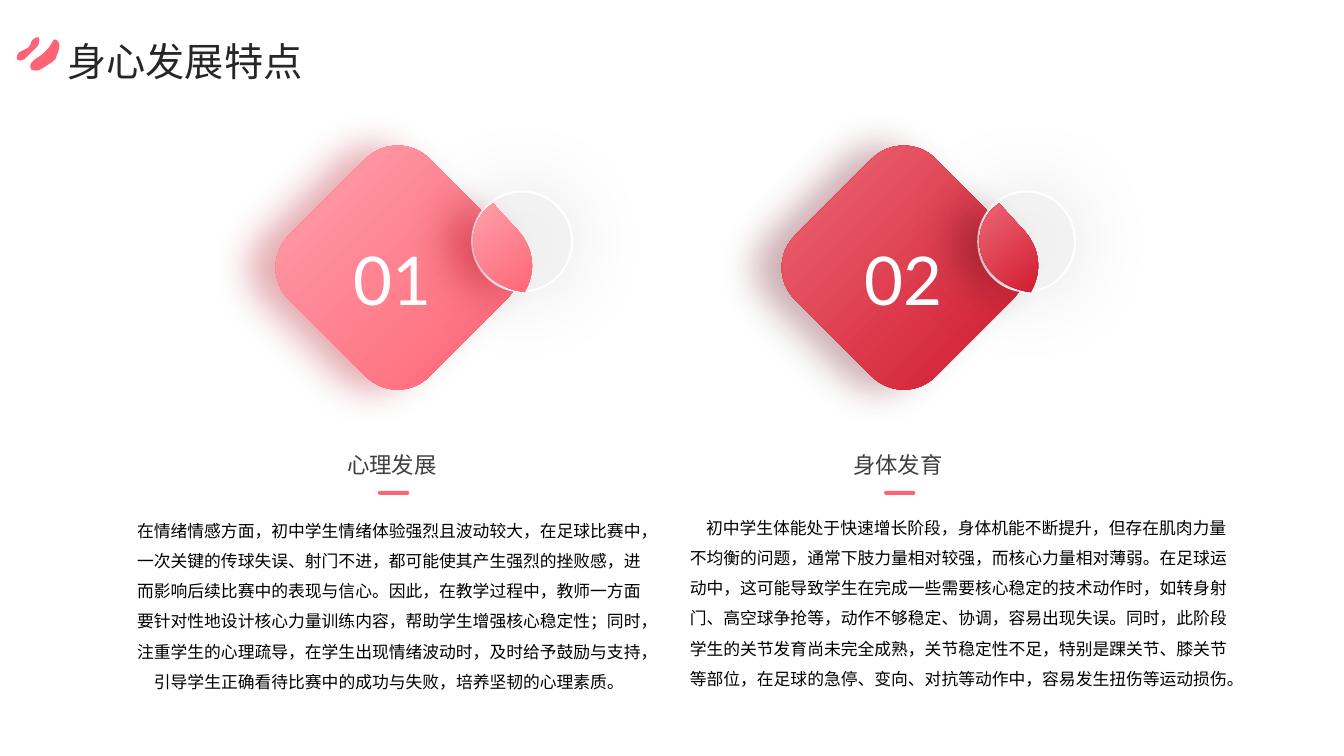
import math
from dataclasses import dataclass
from typing import Any

from lxml import etree
from pptx import Presentation
from pptx import util as u
from pptx.dml.color import RGBColor
from pptx.enum import shapes, text
from pptx.oxml import ns

Point = tuple[float, float]
Segment = tuple[Point, ...]
Outline = list[Segment]

CORAL = RGBColor(0xFF, 0x63, 0x74)
LIGHT_CORAL = RGBColor(0xFF, 0xA1, 0xAC)
CRIMSON = RGBColor(0xCF, 0x18, 0x2C)
LIGHT_CRIMSON = RGBColor(0xEE, 0x69, 0x77)
CORAL_SHADE = RGBColor(0xB1, 0x00, 0x13)
CRIMSON_SHADE = RGBColor(0x68, 0x0C, 0x16)
BLACK = RGBColor(0x00, 0x00, 0x00)
WHITE = RGBColor(0xFF, 0xFF, 0xFF)
GLASS = RGBColor(0xF2, 0xF2, 0xF2)
TITLE_GREY = RGBColor(0x26, 0x26, 0x26)
HEADING_GREY = RGBColor(0x40, 0x40, 0x40)
CHINESE_FONT = "Noto Sans CJK SC"
NUMBER_FONT = "Lato"
DIAMOND_TOP = 100.8
DIAMOND_RADIUS = 90.4
LENS_TILT = 5.6
MARK_TILT = 8.6

MARK: list[Outline] = [
    [
        ((15.1, 43.2),),
        ((14.4, 43.2), (13, 43.2), (12.2, 42.5)),
        ((12.2, 41.8),),
        ((11.5, 40.3), (13, 38.2), (13.7, 37.4)),
        ((15.1, 36.7), (16.6, 36), (18, 35.3)),
        ((19.4, 34.6), (20.9, 33.8), (21.6, 32.4)),
        ((22.3, 31), (22.3, 29.5), (23, 28.8)),
        ((24.5, 27.4), (25.9, 26.6), (27.4, 26.6)),
        ((28.8, 26.6), (28.1, 31), (27.4, 32.4)),
        ((25.9, 34.6), (23, 36.7), (20.9, 38.9)),
        ((20.2, 40.3), (18.7, 41), (17.3, 42.5)),
        ((16.6, 42.5), (15.8, 43.2), (15.1, 43.2)),
    ],
    [
        ((24.5, 50.4),),
        ((23.8, 50.4), (23, 50.4), (22.3, 49.7)),
        ((20.2, 46.1), (23.8, 43.2), (25.9, 41.8)),
        ((31, 38.9), (35.3, 34.6), (38.2, 28.8)),
        ((39.2, 28.1),),
        ((41, 28.1), (42.5, 30.2), (42.5, 31.7)),
        ((42.5, 33.1), (42.5, 35.3), (41.8, 36.7)),
        ((41, 38.9), (40.3, 40.3), (39.6, 42.5)),
        ((37.4, 44.6), (34.6, 46.1), (32.4, 47.5)),
        ((30.2, 49), (27.4, 51.1), (24.5, 50.4)),
    ],
]
LENS: Outline = [
    ((158.4, 44.6),),
    ((159.1, 45.4),),
    ((175.7, 63.4), (175.7, 63.4), (175.7, 63.4)),
    ((187.9, 76.3), (189.4, 93.6), (181.4, 107.3)),
    ((181.4, 108),),
    ((159.1, 105.8), (142.6, 87.8), (144.7, 68.4)),
    ((145.4, 61.2), (148.3, 54), (153.4, 49)),
]


@dataclass
class Box:
    left: float
    top: float
    width: float
    height: float

    def lengths(self) -> list[u.Length]:
        return [u.Pt(value) for value in (self.left, self.top, self.width, self.height)]


@dataclass
class Shadow:
    color: RGBColor
    opacity: int
    blur: float
    distance: float


@dataclass
class Card:
    number: str
    heading: str
    body: str
    left: float
    number_left: float
    circle_width: float
    body_box: Box
    indent: float
    dark: RGBColor
    light: RGBColor
    shade: RGBColor


CARDS = [
    Card("01", "心理发展",
         "在情绪情感方面，初中学生情绪体验强烈且波动较大，在足球比赛中，一次关键的传球失误、射门不进，都可能使其产生强烈的挫败感，进而影响后续比赛中的表现与信心。因此，在教学过程中，教师一方面要针对性地设计核心力量训练内容，帮助学生增强核心稳定性；同时，注重学生的心理疏导，在学生出现情绪波动时，及时给予鼓励与支持，引导学生正确看待比赛中的成功与失败，培养坚韧的心理素质。",
         193.7, 223.9, 71.3, Box(88.6, 361, 378.7, 135.4), 0, CORAL, LIGHT_CORAL, CORAL_SHADE),
    Card("02", "身体发育",
         "初中学生体能处于快速增长阶段，身体机能不断提升，但存在肌肉力量不均衡的问题，通常下肢力量相对较强，而核心力量相对薄弱。在足球运动中，这可能导致学生在完成一些需要核心稳定的技术动作时，如转身射门、高空球争抢等，动作不够稳定、协调，容易出现失误。同时，此阶段学生的关节发育尚未完全成熟，关节稳定性不足，特别是踝关节、膝关节等部位，在足球的急停、变向、对抗等动作中，容易发生扭伤等运动损伤。",
         555.2, 589, 69.1, Box(480.2, 358.9, 409, 162.7), 11.2, CRIMSON, LIGHT_CRIMSON, CRIMSON_SHADE),
]


def set_values(target: Any, values: dict[str, Any]) -> None:
    for name, value in values.items():
        setattr(target, name, value)


def diamond_outline() -> Outline:
    corner = [(77.5, -23), (DIAMOND_RADIUS, -10.6), (DIAMOND_RADIUS, 10.6), (77.5, 23)]
    outline: Outline = []
    for _ in range(4):
        start, *curve = [(x + DIAMOND_RADIUS, y + DIAMOND_RADIUS) for x, y in corner]
        outline += [(start,), tuple(curve)]
        corner = [(-y, x) for x, y in corner]
    return outline


def turn(point: Point, pivot: Point, degrees: float) -> Point:
    cosine, sine = math.cos(math.radians(degrees)), math.sin(math.radians(degrees))
    x, y = point[0] - pivot[0], point[1] - pivot[1]
    return pivot[0] + x * cosine - y * sine, pivot[1] + x * sine + y * cosine


def draw_outlines(slide: Any, outlines: list[Outline], left: float = 0, top: float = 0,
                  tilt: float = 0, pivot: Point = (0, 0)) -> Any:
    contours = [[tuple(u.Pt(value + offset) for value, offset in zip(turn(point, pivot, -tilt), (left, top)))
                 for segment in outline for point in segment] for outline in outlines]
    builder = slide.shapes.build_freeform(*contours[0][0])
    for index, points in enumerate(contours):
        if index:
            builder.move_to(*points[0])
        builder.add_line_segments(points[1:], close=True)
    shape = builder.convert_to_shape()
    lines = iter(list(shape.element.iter(ns.qn("a:lnTo"))))
    for segment in (segment for outline in outlines for segment in outline[1:]):
        first, *others = [next(lines) for _ in segment]
        if others:
            first.tag = ns.qn("a:cubicBezTo")
            for line in others:
                first.append(line[0])
                line.getparent().remove(line)
    shape.rotation = tilt
    shape.line.fill.background()
    shape.shadow.inherit = False
    return shape


def add_color(parent: Any, color: RGBColor, opacity: int) -> None:
    element = etree.SubElement(parent, ns.qn("a:srgbClr"), val=str(color))
    etree.SubElement(element, ns.qn("a:alpha"), val=str(opacity * 1000))


def cast_shadow(shape: Any, shadow: Shadow) -> None:
    shape.shadow.inherit = False
    effects = shape.element.spPr.find(ns.qn("a:effectLst"))
    outer = etree.SubElement(effects, ns.qn("a:outerShdw"), blurRad=str(u.Pt(shadow.blur)),
                             dist=str(u.Pt(shadow.distance)), dir="10800000", algn="ctr", rotWithShape="0")
    add_color(outer, shadow.color, shadow.opacity)


def fill_gradient(shape: Any, card: Card) -> None:
    shape.fill.gradient()
    shape.fill.gradient_angle = 135
    for stop, color in zip(shape.fill.gradient_stops, (card.dark, card.light)):
        stop.color.rgb = color
    cast_shadow(shape, Shadow(card.shade, 32, 26, 19))


def write(shape: Any, words: str, font: str, size: float, color: RGBColor, spacing: float,
          anchor: Any, align: Any, insets: Point = (7.2, 3.6), indent: float = 0) -> None:
    frame = shape.text_frame
    across, down = (u.Pt(value) for value in insets)
    set_values(frame, {"word_wrap": True, "auto_size": text.MSO_AUTO_SIZE.NONE, "vertical_anchor": anchor,
                       "margin_left": across, "margin_right": across, "margin_top": down, "margin_bottom": down})
    paragraph = frame.paragraphs[0]
    set_values(paragraph, {"alignment": align, "line_spacing": spacing})
    if indent:
        paragraph._p.get_or_add_pPr().set("indent", str(u.Pt(indent)))
    run = paragraph.add_run()
    run.text = words
    run.font.color.rgb = color
    set_values(run.font, {"name": font, "size": u.Pt(size)})
    etree.SubElement(run._r.get_or_add_rPr(), ns.qn("a:ea"), typeface=font)


def draw_card(slide: Any, card: Card) -> None:
    fill_gradient(draw_outlines(slide, [diamond_outline()], card.left, DIAMOND_TOP), card)
    preset, center, anchors = shapes.MSO_SHAPE, text.PP_ALIGN.CENTER, text.MSO_ANCHOR
    circle_box = Box(card.left + 143.6, 136.8, card.circle_width, 71.3)
    circle = slide.shapes.add_shape(preset.OVAL, *circle_box.lengths())
    circle.fill.solid()
    circle.fill.fore_color.rgb = GLASS
    glass = circle.element.spPr.find(ns.qn("a:solidFill"))
    glass.clear()
    add_color(glass, GLASS, 70)
    circle.line.color.rgb = WHITE
    circle.line.width = u.Pt(1.5)
    cast_shadow(circle, Shadow(BLACK, 15, 62, 0))
    fill_gradient(draw_outlines(slide, [LENS], card.left, DIAMOND_TOP, LENS_TILT, (166, 76)), card)
    bar = slide.shapes.add_shape(preset.ROUNDED_RECTANGLE, *Box(card.left + 76.3, 350.6, 22.3, 2.9).lengths())
    bar.adjustments[0] = 0.5
    bar.fill.solid()
    bar.fill.fore_color.rgb = CORAL
    bar.line.fill.background()
    bar.shadow.inherit = False
    heading = slide.shapes.add_textbox(*Box(card.left - 35.8, 299.8, 244, 44.6).lengths())
    write(heading, card.heading, CHINESE_FONT, 16, HEADING_GREY, 1.3, anchors.BOTTOM, center, (5, 2.9))
    body = slide.shapes.add_textbox(*card.body_box.lengths())
    write(body, card.body, CHINESE_FONT, 12, BLACK, 1.5, anchors.TOP, center, indent=card.indent)
    number = slide.shapes.add_textbox(*Box(card.number_left, 150.5, 113, 79.9).lengths())
    write(number, card.number, NUMBER_FONT, 48, WHITE, 1.3, anchors.MIDDLE, center, (5, 2.9))


def main() -> None:
    presentation = Presentation()
    set_values(presentation, {"slide_width": u.Pt(960), "slide_height": u.Pt(540)})
    slide = presentation.slides.add_slide(presentation.slide_layouts[5])
    title = slide.shapes.title
    set_values(title, dict(zip(("left", "top", "width", "height"), Box(41, 18.4, 855.4, 40.3).lengths())))
    write(title, "身心发展特点", CHINESE_FONT, 28, TITLE_GREY, 1.3, text.MSO_ANCHOR.MIDDLE, text.PP_ALIGN.LEFT)
    for card in CARDS:
        draw_card(slide, card)
    mark = draw_outlines(slide, MARK, tilt=MARK_TILT, pivot=(26.6, 38.9))
    mark.fill.solid()
    mark.fill.fore_color.rgb = CORAL
    presentation.save("out.pptx")


if __name__ == "__main__":
    main()
